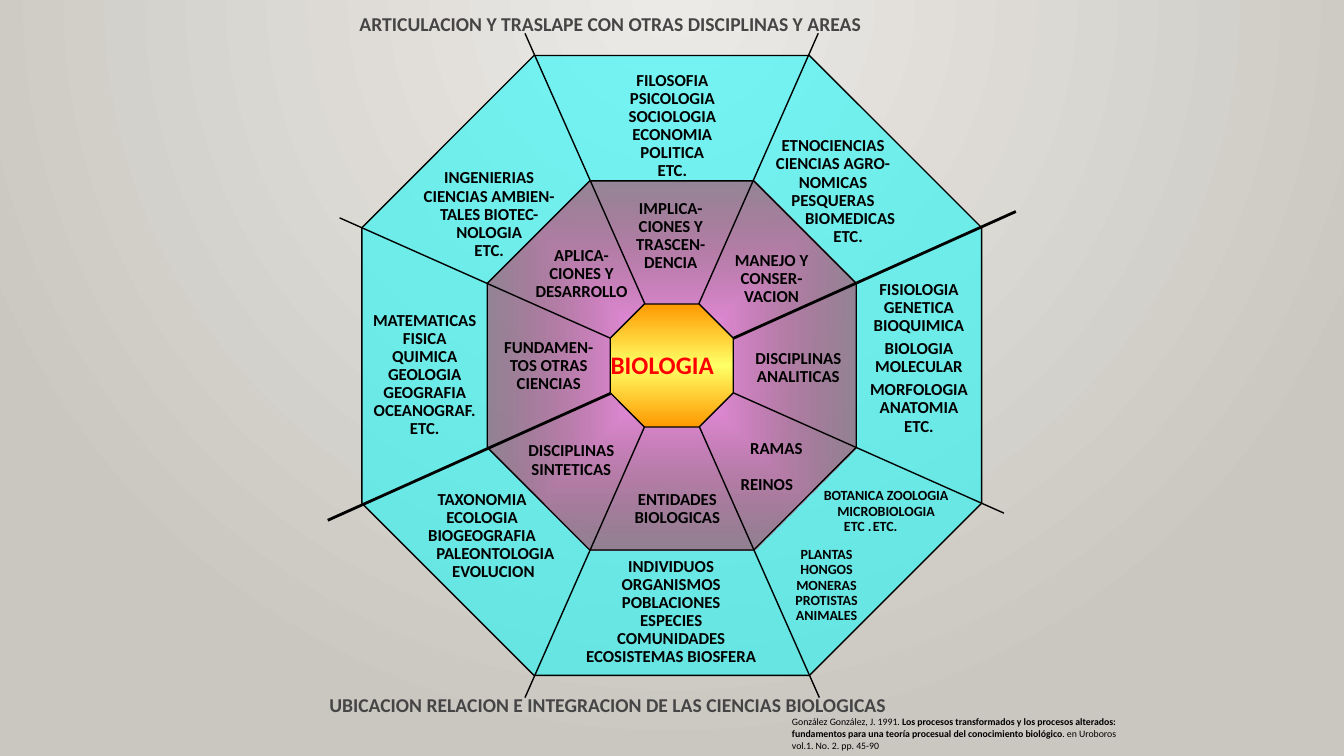
import pptx
import pptx.util
import pptx.dml.color
import pptx.enum.text
import pptx.oxml
import pptx.oxml.ns
from lxml import etree
from pptx.util import Cm

COLORS = {
    "ink": "000000", "title": "454545", "core_text": "FF0000", "areas": "00FFFF",
    "pink": "FF99FF", "crimson": "B71E42", "orange": "FF9900", "yellow": "FFFF66",
    "paper": "ECEAE7", "stone": "CAC7C1",
}
ALIGN = pptx.enum.text.PP_ALIGN
CENTER_X, CENTER_Y = 16.93, 9.21
SIDE_RATIO = 4 / 9

SPOKES = [
    (25.6, 5.33, 8.26, 13.11, 2),
    (13.23, 17.58, 20.62, 0.84, 1),
    (25.3, 12.93, 8.56, 5.49, 1),
    (13.23, 0.84, 20.65, 17.58, 1),
]

AREAS = [
    ((14.58, 13.97, 4.67, 2.95), ["INDIVIDUOS", "ORGANISMOS", "POBLACIONES", "ESPECIES",
                                  "COMUNIDADES", "ECOSISTEMAS BIOSFERA"]),
    ((21.74, 6.99, 2.84, 4.19), ["FISIOLOGIA", "GENETICA", "BIOQUIMICA",
                                 ("BIOLOGIA", {"before": 3.6}), ("MOLECULAR", {"after": 3.6}),
                                 "MORFOLOGIA", "ANATOMIA", "ETC."]),
    ((15.65, 1.73, 2.59, 2.95), ["FILOSOFIA", "PSICOLOGIA", "SOCIOLOGIA", "ECONOMIA",
                                 "POLITICA", "ETC."]),
    ((19.23, 3.38, 3.53, 2.95), ["ETNOCIENCIAS", "CIENCIAS AGRO-", "NOMICAS", "PESQUERAS",
                                 ("BIOMEDICAS", {"margin": 0.86}), ("ETC.", {"margin": 0.76})]),
    ((10.49, 4.19, 3.68, 2.49), ["INGENIERIAS", "CIENCIAS AMBIEN-", "TALES BIOTEC-",
                                 "NOLOGIA", "ETC."]),
    ((9.22, 7.77, 2.97, 3.4), ["MATEMATICAS", "FISICA", "QUIMICA", "GEOLOGIA", "GEOGRAFIA",
                               "OCEANOGRAF.", "ETC."]),
    ((10.13, 12.29, 4.04, 2.49), ["TAXONOMIA", "ECOLOGIA", "BIOGEOGRAFIA",
                                  ("PALEONTOLOGIA", {"margin": 0.67}),
                                  ("EVOLUCION", {"margin": 0.57})]),
    ((12.52, 8.46, 2.62, 1.57), ["FUNDAMEN-", "TOS OTRAS", "CIENCIAS"]),
    ((13.31, 6.15, 2.69, 1.57), ["APLICA-", "CIONES Y", "DESARROLLO"]),
    ((15.85, 4.95, 2.11, 2.03), ["IMPLICA-", "CIONES Y", "TRASCEN-", "DENCIA"]),
    ((18.29, 6.27, 2.31, 1.57), ["MANEJO Y", "CONSER-", "VACION"]),
    ((18.8, 8.74, 2.64, 1.09), ["DISCIPLINAS", "ANALITICAS"]),
    ((15.8, 12.29, 2.54, 1.09), ["ENTIDADES", "BIOLOGICAS"]),
    ((13.13, 11.07, 2.54, 1.09), ["DISCIPLINAS", "SINTETICAS"]),
]
BRANCHES = ((17.04, 11, 4.19, 1.55), [("RAMAS", {"margin": 0.86}),
                                      ("REINOS", {"margin": 0.38, "before": 13.2})])
KINGDOMS = ((19.84, 13.72, 1.98, 2.11), ["PLANTAS", "HONGOS", "MONERAS", "PROTISTAS", "ANIMALES"])
SCIENCES = ((20.55, 12.24, 3.56, 1.32), [
    "BOTANICA ZOOLOGIA", "MICROBIOLOGIA",
    ("ETC .\tETC.", {"align": ALIGN.LEFT, "indent": 0.54, "tab": 2.03})])
TITLES = [
    ((8.86, 0.2, 13.13, 0.79), ["ARTICULACION Y TRASLAPE CON OTRAS DISCIPLINAS Y AREAS"]),
    ((8.1, 17.35, 14.53, 0.79), ["UBICACION RELACION E INTEGRACION DE LAS CIENCIAS BIOLOGICAS"]),
]
CITATION = ((19.71, 17.91, 8.86, 1.17), [
    [("González González, J. 1991. ", False),
     ("Los procesos transformados y los procesos alterados:", True)],
    [("fundamentos para una teoría procesual del conocimiento biológico", True),
     (". en Uroboros", False)],
    [("vol.1. No. 2. pp. 45-90", False)],
])


def rgb(name):
    return pptx.dml.color.RGBColor.from_string(COLORS[name])


def assign(target, values):
    for attribute, value in values.items():
        setattr(target, attribute, value)


def add_color(parent, name, alpha=None):
    color = etree.SubElement(parent, pptx.oxml.ns.qn("a:srgbClr"), val=COLORS[name])
    if alpha:
        etree.SubElement(color, pptx.oxml.ns.qn("a:alpha"), val=str(alpha * 1000))


def fill_gradient(fill, owner, stops, shape_path=None, focus=None):
    qn = pptx.oxml.ns.qn
    fill.gradient()
    gradient = next(owner.iter(qn("a:gradFill")))
    for child in list(gradient):
        gradient.remove(child)
    stop_list = etree.SubElement(gradient, qn("a:gsLst"))
    for position, name, alpha in stops:
        stop = etree.SubElement(stop_list, qn("a:gs"), pos=str(position * 1000))
        add_color(stop, name, alpha)
    if shape_path:
        route = etree.SubElement(gradient, qn("a:path"), path=shape_path)
        sides = {side: str(share * 1000) for side, share in zip("ltrb", focus)}
        etree.SubElement(route, qn("a:fillToRect"), sides)
    else:
        etree.SubElement(gradient, qn("a:lin"), ang="5400000", scaled="0")


def add_octagon(slide, radius):
    half = radius * SIDE_RATIO
    corners = [(-half, -radius), (half, -radius), (radius, -half), (radius, half),
               (half, radius), (-half, radius), (-radius, half), (-radius, -half)]
    points = [(Cm(CENTER_X + x), Cm(CENTER_Y + y)) for x, y in corners]
    builder = slide.shapes.build_freeform(*points[0])
    builder.add_line_segments(points[1:], close=True)
    octagon = builder.convert_to_shape()
    octagon.shadow.inherit = False
    octagon.line.color.rgb = rgb("ink")
    octagon.line.width = pptx.util.Pt(1)
    return octagon


def add_spoke(slide, x1, y1, x2, y2, weight):
    spoke = slide.shapes.add_connector(1, Cm(x1), Cm(y1), Cm(x2), Cm(y2))
    spoke.line.color.rgb = rgb("ink")
    spoke.line.width = pptx.util.Pt(weight)
    etree.SubElement(spoke._element.spPr, pptx.oxml.ns.qn("a:effectLst"))


def format_paragraph(paragraph, layout, align, spacing):
    assign(paragraph, {
        "alignment": layout.get("align", align),
        "line_spacing": spacing,
        "space_before": pptx.util.Pt(layout.get("before", 0)),
        "space_after": pptx.util.Pt(layout.get("after", 0)),
    })
    properties = paragraph._p.get_or_add_pPr()
    properties.set("marL", str(Cm(layout.get("margin", 0))))
    properties.set("indent", str(Cm(layout.get("indent", 0))))
    if "tab" in layout:
        tabs = etree.SubElement(properties, pptx.oxml.ns.qn("a:tabLst"))
        etree.SubElement(tabs, pptx.oxml.ns.qn("a:tab"), pos=str(Cm(layout["tab"])), algn="l")


def add_label(slide, label, size=12, color="ink", align=ALIGN.CENTER, spacing=0.9,
              inset=(0.18, 0.08), wrap=False):
    place, lines = label
    box = slide.shapes.add_textbox(*map(Cm, place))
    frame = box.text_frame
    across, down = map(Cm, inset)
    assign(frame, {
        "margin_left": across, "margin_right": across, "margin_top": down, "margin_bottom": down,
        "word_wrap": wrap, "auto_size": pptx.enum.text.MSO_AUTO_SIZE.SHAPE_TO_FIT_TEXT,
    })
    for index, line in enumerate(lines):
        text, layout = line if isinstance(line, tuple) else (line, {})
        paragraph = frame.add_paragraph() if index else frame.paragraphs[0]
        format_paragraph(paragraph, layout, align, spacing)
        for words, bold in text if isinstance(text, list) else [(text, True)]:
            run = paragraph.add_run()
            run.text = words
            assign(run.font, {"name": "Calibri", "size": pptx.util.Pt(size), "bold": bold})
            run.font.color.rgb = rgb(color)


def main():
    deck = pptx.Presentation()
    assign(deck, {"slide_width": Cm(33.87), "slide_height": Cm(19.05)})
    slide = deck.slides.add_slide(deck.slide_layouts[6])
    fill_gradient(slide.background.fill, slide._element,
                  [(0, "paper", None), (100, "stone", None)], "circle", (43, 0, 43, 100))

    outer = add_octagon(slide, 7.81)
    outer.fill.solid()
    outer.fill.fore_color.rgb = rgb("areas")
    tint = next(outer._element.spPr.iter(pptx.oxml.ns.qn("a:srgbClr")))
    etree.SubElement(tint, pptx.oxml.ns.qn("a:alpha"), val="50000")

    middle = add_octagon(slide, 4.65)
    fill_gradient(middle.fill, middle._element.spPr,
                  [(0, "pink", None), (100, "crimson", 50)], "rect", (50, 50, 50, 50))
    for spoke in SPOKES:
        add_spoke(slide, *spoke)
    core = add_octagon(slide, 1.55)
    fill_gradient(core.fill, core._element.spPr,
                  [(0, "orange", None), (50, "yellow", None), (100, "orange", None)])

    add_label(slide, ((15.21, 8.81, 3.76, 0.86), ["BIOLOGIA"]), 18, "core_text", ALIGN.LEFT)
    for area in AREAS:
        add_label(slide, area)
    add_label(slide, BRANCHES, wrap=True)
    add_label(slide, KINGDOMS, 10)
    add_label(slide, SCIENCES, 10, wrap=True)
    for title in TITLES:
        add_label(slide, title, 14, "title", ALIGN.LEFT, 1.0, (0.2, 0.1))
    add_label(slide, CITATION, 7, "ink", ALIGN.LEFT, 1.0, (0.25, 0.13))
    deck.save("out.pptx")


if __name__ == "__main__":
    main()
